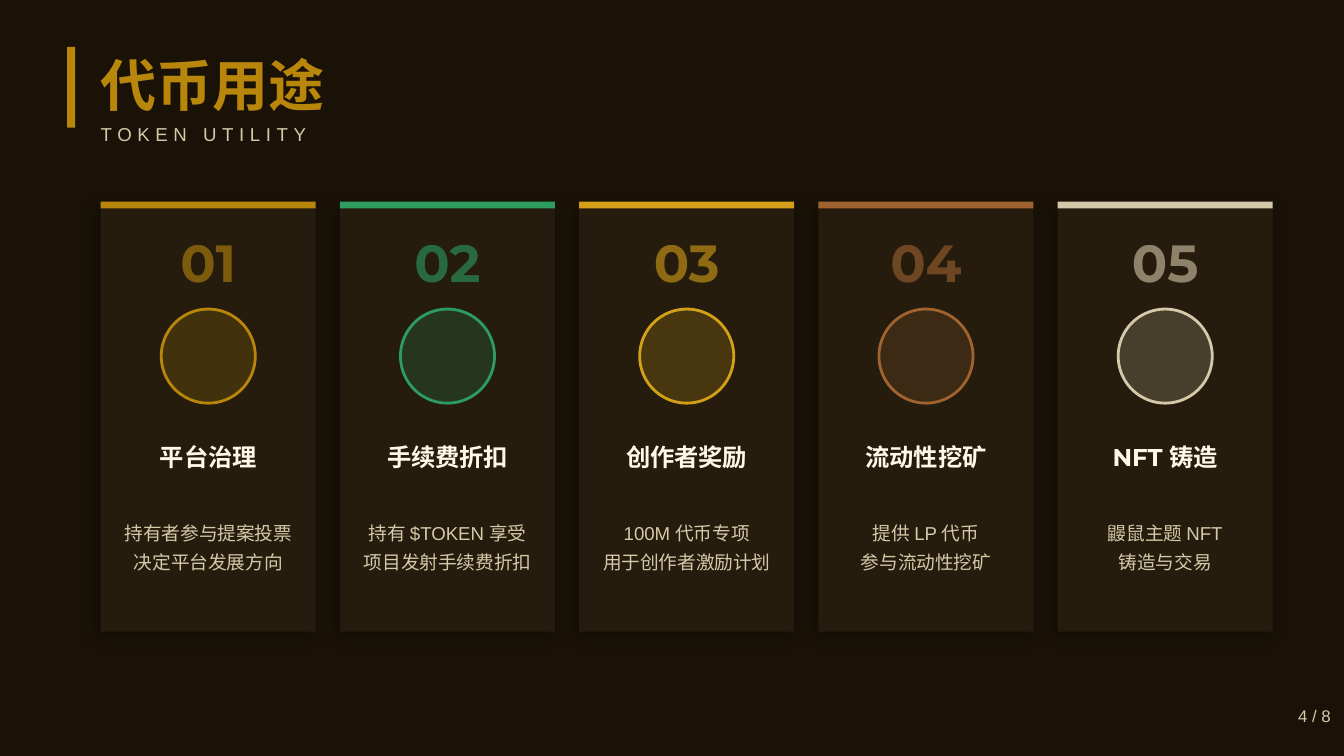
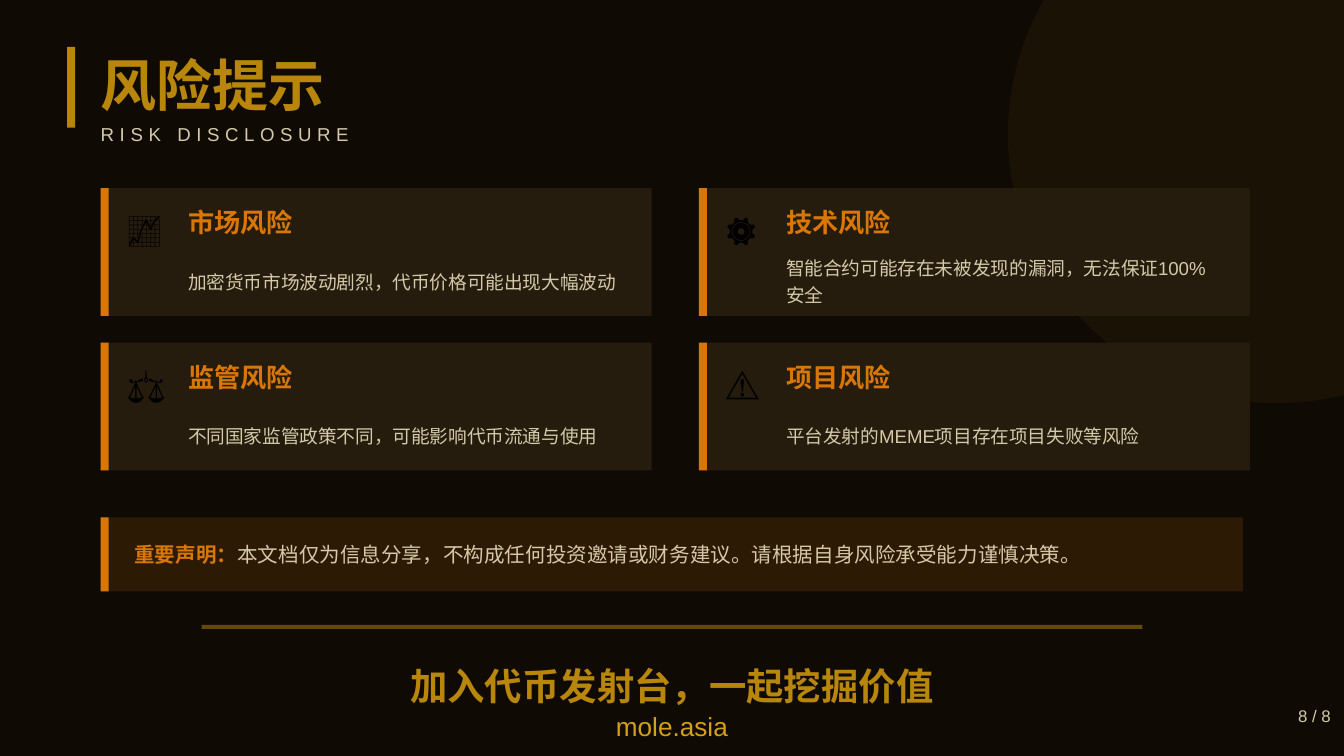
import dataclasses

import lxml.etree
import pptx
import pptx.dml.color
import pptx.enum.shapes
import pptx.enum.text
import pptx.oxml.ns
import pptx.util

Pt = pptx.util.Pt
qn = pptx.oxml.ns.qn
Shape = pptx.enum.shapes.MSO_SHAPE
Align = pptx.enum.text.PP_ALIGN


@dataclasses.dataclass(frozen=True)
class Theme:
    """Colours, fonts and type sizes shared by the slides."""

    earth: str = "1A1207"
    night: str = "0F0A04"
    panel: str = "251C0E"
    gold: str = "B8860B"
    bright_gold: str = "D4A017"
    green: str = "2D9D5F"
    copper: str = "A0622E"
    sand: str = "D4C9A8"
    cream: str = "FFF8E7"
    warning: str = "D97706"
    black: str = "000000"
    heading_font: str = "Montserrat"
    body_font: str = "Arial"
    icon_font: str = "Calibri"
    title_size: float = 30
    number_size: float = 28
    closing_size: float = 20
    icon_size: float = 18
    risk_size: float = 14
    card_size: float = 13
    statement_size: float = 11
    body_size: float = 10
    footer_size: float = 9


THEME = Theme()


@dataclasses.dataclass(frozen=True)
class Box:
    """A rectangle in points."""

    left: float
    top: float
    width: float
    height: float

    def inner(self, left, top, width, height):
        """Return a box offset from this one's top left corner."""
        return Box(self.left + left, self.top + top, width, height)

    def lengths(self):
        """Return the four lengths for python-pptx."""
        return [Pt(value) for value in dataclasses.astuple(self)]


SLIDE = Box(0, 0, 720, 405)


def paint(fill, parent, color, opacity=100):
    """Make a fill solid, with optional transparency."""
    fill.solid()
    fill.fore_color.rgb = pptx.dml.color.RGBColor.from_string(color)
    if opacity < 100:
        color_element = parent.find(qn("a:solidFill"))[0]
        lxml.etree.SubElement(color_element, qn("a:alpha"), val=str(opacity * 1000))


def add_shape(slide, box, color, kind=Shape.RECTANGLE, opacity=100, outline=None):
    """Add a flat preset shape."""
    shape = slide.shapes.add_shape(kind, *box.lengths())
    shape.shadow.inherit = False
    paint(shape.fill, shape._element.spPr, color, opacity)
    if outline:
        shape.line.color.rgb = pptx.dml.color.RGBColor.from_string(outline)
        shape.line.width = Pt(1.5)
    else:
        shape.line.fill.background()
    return shape


def add_drop_shadow(shape):
    """Give a shape a soft black shadow."""
    effects = shape._element.spPr.find(qn("a:effectLst"))
    shadow = lxml.etree.SubElement(
        effects, qn("a:outerShdw"), blurRad=str(Pt(8)), dist=str(Pt(3)),
        dir=str(135 * 60000), algn="bl", rotWithShape="0")
    color = lxml.etree.SubElement(shadow, qn("a:srgbClr"), val=THEME.black)
    lxml.etree.SubElement(color, qn("a:alpha"), val="30000")


def format_run(run, size=THEME.body_size, color=THEME.sand, font=THEME.body_font,
               bold=False, opacity=100, tracking=0):
    """Set the character format of a run."""
    run.font.size = Pt(size)
    run.font.name = font
    run.font.bold = bold
    properties = run._r.get_or_add_rPr()
    paint(run.font.fill, properties, color, opacity)
    if tracking:
        properties.set("spc", str(tracking * 100))


def write_text(shape, *lines, align=Align.LEFT, spacing=None, margin=0, **style):
    """Write lines, each a string or a list of (text, style changes) runs."""
    frame = shape.text_frame
    frame.word_wrap = True
    frame.auto_size = pptx.enum.text.MSO_AUTO_SIZE.NONE
    frame.vertical_anchor = pptx.enum.text.MSO_ANCHOR.MIDDLE
    frame.margin_left = frame.margin_right = Pt(margin)
    frame.margin_top = frame.margin_bottom = 0
    for index, line in enumerate(lines):
        paragraph = frame.add_paragraph() if index else frame.paragraphs[0]
        paragraph.alignment = align
        if spacing:
            paragraph.line_spacing = spacing
        for text, changes in [(line, {})] if isinstance(line, str) else line:
            run = paragraph.add_run()
            run.text = text
            format_run(run, **{**style, **changes})


def add_text(slide, box, *lines, **style):
    """Add a text box."""
    write_text(slide.shapes.add_textbox(*box.lengths()), *lines, **style)


def add_header(slide, box, title, subtitle):
    """Place the gold bar, title and subtitle."""
    add_shape(slide, box.inner(0, 3.6, 4.32, 43.2), THEME.gold)
    placeholder = slide.shapes.title
    placeholder.left, placeholder.top, placeholder.width, placeholder.height = (
        box.inner(18, 0, 288, 46.8).lengths())
    write_text(placeholder, title, size=THEME.title_size, color=THEME.gold,
               font=THEME.heading_font, bold=True)
    add_text(slide, box.inner(18, 39.6, 288, 21.6), subtitle, tracking=3)


def start_slide(presentation, background, title, subtitle):
    """Add a title-only slide with its background and header."""
    slide = presentation.slides.add_slide(presentation.slide_layouts[5])
    fill = slide.background.fill
    fill.solid()
    fill.fore_color.rgb = pptx.dml.color.RGBColor.from_string(background)
    add_header(slide, Box(36, 21.6, 306, 61.2), title, subtitle)
    return slide


def add_page_number(slide, number):
    """Place the page number at the lower right."""
    add_text(slide, SLIDE.inner(633.6, 370.8, 86.4, 25.2), f"{number} / 8",
             size=THEME.footer_size, align=Align.RIGHT, margin=7.2)


def add_utility_card(slide, box, number, color, heading, lines):
    """Place one numbered token use."""
    add_drop_shadow(add_shape(slide, box, THEME.panel))
    add_shape(slide, box.inner(0, 0, box.width, 3.6), color)
    add_text(slide, box.inner(0, 14.4, box.width, 36), f"{number:02}",
             size=THEME.number_size, color=color, font=THEME.heading_font,
             bold=True, opacity=60, align=Align.CENTER)
    circle = 50.4
    add_shape(slide, box.inner((box.width - circle) / 2, 57.6, circle, circle),
              color, Shape.OVAL, opacity=20, outline=color)
    text_width = box.width - 14.4
    add_text(slide, box.inner(7.2, 122.4, text_width, 28.8), heading,
             size=THEME.card_size, color=THEME.cream, font=THEME.heading_font,
             bold=True, align=Align.CENTER)
    add_text(slide, box.inner(7.2, 154.8, text_width, 57.6), *lines,
             spacing=1.3, align=Align.CENTER)


def build_utility_slide(presentation):
    """Build the slide on token uses."""
    slide = start_slide(presentation, THEME.earth, "代币用途", "TOKEN UTILITY")
    cards = [
        (THEME.gold, "平台治理", ["持有者参与提案投票", "决定平台发展方向"]),
        (THEME.green, "手续费折扣", ["持有 $TOKEN 享受", "项目发射手续费折扣"]),
        (THEME.bright_gold, "创作者奖励", ["100M 代币专项", "用于创作者激励计划"]),
        (THEME.copper, "流动性挖矿", ["提供 LP 代币", "参与流动性挖矿"]),
        (THEME.sand, "NFT 铸造", ["鼹鼠主题 NFT", "铸造与交易"]),
    ]
    row = Box(54, 108, 627.84, 230.4)
    width = 115.2
    pitch = (row.width - width) / (len(cards) - 1)
    for index, card in enumerate(cards):
        add_utility_card(slide, row.inner(index * pitch, 0, width, row.height),
                         index + 1, *card)
    add_page_number(slide, 4)


def add_accent_panel(slide, box, color, opacity=100):
    """Place a panel with a warning bar on its left edge."""
    add_shape(slide, box, color, opacity=opacity)
    add_shape(slide, box.inner(0, 0, 4.32, box.height), THEME.warning)


def add_risk_card(slide, box, icon, heading, description):
    """Place one risk with its icon."""
    add_accent_panel(slide, box, THEME.panel)
    add_text(slide, box.inner(14.4, 7.2, 28.8, 28.8), icon,
             size=THEME.icon_size, color=THEME.black, font=THEME.icon_font)
    add_text(slide, box.inner(46.8, 5.76, 230.4, 25.2), heading,
             size=THEME.risk_size, color=THEME.warning,
             font=THEME.heading_font, bold=True)
    add_text(slide, box.inner(46.8, 34.56, 230.4, 28.8), description, spacing=1.2)


def add_statement(slide, box):
    """Place the important notice."""
    add_accent_panel(slide, box, THEME.warning, opacity=15)
    add_text(slide, box.inner(18, 0, 576, box.height),
             [("重要声明：", {"color": THEME.warning, "bold": True}),
              ("本文档仅为信息分享，不构成任何投资邀请或财务建议。请根据自身风险承受能力谨慎决策。", {})],
             size=THEME.statement_size)


def add_closing(slide, box):
    """Place the rule, closing call and web address."""
    add_shape(slide, box.inner(54, 0, 504, 2.16), THEME.gold, opacity=50)
    add_text(slide, box.inner(0, 14.4, box.width, 36), "加入代币发射台，一起挖掘价值",
             size=THEME.closing_size, color=THEME.gold, font=THEME.heading_font,
             bold=True, align=Align.CENTER)
    add_text(slide, box.inner(0, 43.2, box.width, 21.6), "mole.asia",
             size=THEME.risk_size, color=THEME.bright_gold, align=Align.CENTER)


def build_risk_slide(presentation):
    """Build the slide on risks."""
    slide = start_slide(presentation, THEME.night, "风险提示", "RISK DISCLOSURE")
    add_shape(slide, SLIDE.inner(540, -72, 288, 288), THEME.gold, Shape.OVAL, opacity=7)
    risks = [
        ("📈", "市场风险", "加密货币市场波动剧烈，代币价格可能出现大幅波动"),
        ("⚙️", "技术风险", "智能合约可能存在未被发现的漏洞，无法保证100%安全"),
        ("⚖️", "监管风险", "不同国家监管政策不同，可能影响代币流通与使用"),
        ("⚠️", "项目风险", "平台发射的MEME项目存在项目失败等风险"),
    ]
    grid = Box(54, 100.8, 615.6, 151.2)
    for index, risk in enumerate(risks):
        row, column = divmod(index, 2)
        add_risk_card(slide, grid.inner(column * 320.4, row * 82.8, 295.2, 68.4), *risk)
    add_statement(slide, Box(54, 277.2, 612, 39.6))
    add_closing(slide, Box(54, 334.8, 612, 64.8))
    add_page_number(slide, 8)


def main():
    """Build and save the presentation."""
    presentation = pptx.Presentation()
    presentation.slide_width = Pt(SLIDE.width)
    presentation.slide_height = Pt(SLIDE.height)
    build_utility_slide(presentation)
    build_risk_slide(presentation)
    presentation.save("out.pptx")


if __name__ == "__main__":
    main()
